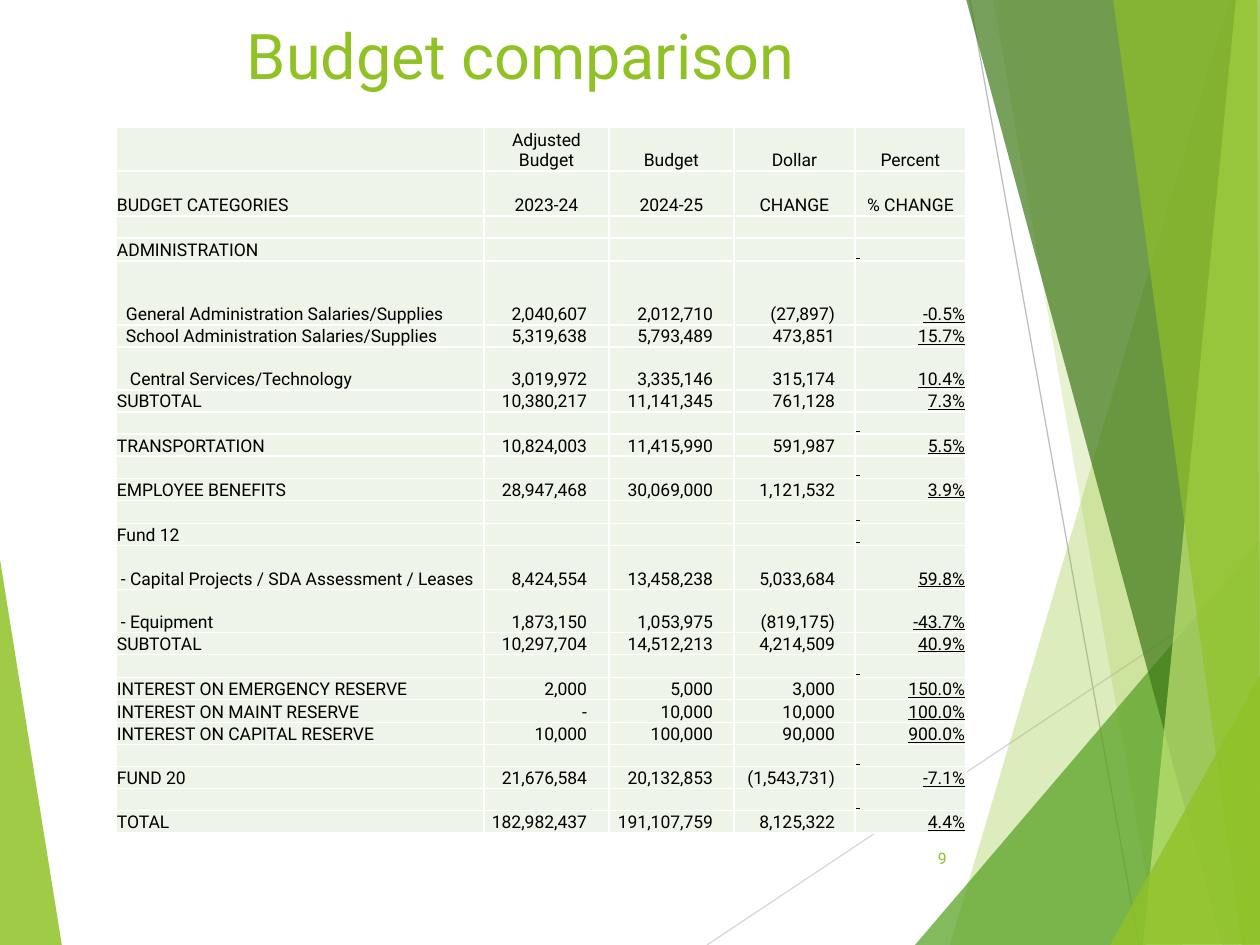
from lxml.etree import SubElement
from pptx import Presentation
from pptx.dml.color import RGBColor as Color
from pptx.enum.shapes import MSO_CONNECTOR as Connector
from pptx.enum.text import MSO_ANCHOR as Anchor, PP_ALIGN as Align
from pptx.oxml.ns import qn
from pptx.util import Pt

PX = 914400 / 126

THEME = {
    "font": "Roboto",
    "accent": "90C226",
    "green": "54A021",
    "dark": "3F7819",
    "pale": "C0E474",
    "cell": "EEF4E8",
    "border": "FFFFFF",
    "ink": "000000",
    "rule_light": "D9D9D9",
    "rule_dark": "BFBFBF",
    "title_size": 36,
    "table_size": 10,
    "page_size": 9,
}


def px(value):
    return round(value * PX)


def write(para, text, size, color, align, underline=None):
    para.alignment = align
    span = para.add_run()
    span.text = text
    span.font.color.rgb = Color.from_string(color)
    formats = {"name": THEME["font"], "size": Pt(size), "underline": underline}
    for name, value in formats.items():
        setattr(span.font, name, value)


deck = Presentation()
deck.slide_width, deck.slide_height = px(1260), px(945)
page = deck.slides.add_slide(deck.slide_layouts[6])

left_facet = [("accent", 85, [(-1, 553), (62, 946), (-1, 945)])]
rules = [
    ("rule_light", (707, 945), (1261, 576)),
    ("rule_dark", (970, 0), (1139, 945)),
]
right_facets = [
    ("accent", 30, [(1229, 0), (950, 945), (1262, 946), (1261, 1)]),
    ("accent", 20, [(993, -1), (1158, 945), (1261, 945), (1261, -1)]),
    ("green", 72, [(915, 945), (1260, 541), (1261, 945)]),
    ("dark", 70, [(966, -1), (1222, 945), (1261, 944), (1261, -1)]),
    ("pale", 70, [(1236, -1), (1143, 945), (1261, 945), (1260, -1)]),
    ("accent", 65, [(1113, -1), (1242, 945), (1260, 945), (1257, -1)]),
    ("accent", 80, [(1110, 945), (1261, 674), (1261, 944)]),
]

for facets, lines in ((left_facet, rules), (right_facets, [])):
    for color, opacity, points in facets:
        builder = page.shapes.build_freeform(*points[0], scale=PX)
        builder.add_line_segments(points[1:], close=True)
        facet = builder.convert_to_shape()
        facet.shadow.inherit = False
        facet.fill.solid()
        facet.fill.fore_color.rgb = Color.from_string(THEME[color])
        facet.line.fill.background()
        paint = facet._element.spPr.find(qn("a:solidFill"))[0]
        SubElement(paint, qn("a:alpha")).set("val", str(opacity * 1000))
    for color, start, end in lines:
        ends = [px(value) for value in start + end]
        rule = page.shapes.add_connector(Connector.STRAIGHT, *ends)
        rule.line.color.rgb = Color.from_string(THEME[color])
        rule.line.width = Pt(0.75)
        SubElement(rule._element.spPr, qn("a:effectLst"))

texts = [
    ("Budget comparison", (84, 10, 874, 116), "title_size", Align.CENTER, Anchor.TOP),
    ("9", (888, 833, 71, 50), "page_size", Align.RIGHT, Anchor.MIDDLE),
]
for text, place, size, align, anchor in texts:
    box = page.shapes.add_textbox(*[px(value) for value in place])
    box.text_frame.word_wrap = True
    box.text_frame.vertical_anchor = anchor
    write(box.text_frame.paragraphs[0], text, THEME[size], THEME["accent"], align)

EMPTY = ("", "", "", "", "")
SPACER = ("", "", "", "", " ")
rows = [
    (44, 0, ("", "Adjusted Budget", "Budget", "Dollar", "Percent")),
    (45, 0, ("BUDGET CATEGORIES", "2023-24", "2024-25", "CHANGE", "% CHANGE")),
    (21, 0, EMPTY),
    (23, 0, ("ADMINISTRATION", "", "", "", " ")),
    (64, 9, ("General Administration Salaries/Supplies", "2,040,607", "2,012,710", "(27,897)", "-0.5%")),
    (22, 9, ("School Administration Salaries/Supplies", "5,319,638", "5,793,489", "473,851", "15.7%")),
    (43, 13, ("Central Services/Technology", "3,019,972", "3,335,146", "315,174", "10.4%")),
    (22, 0, ("SUBTOTAL", "10,380,217", "11,141,345", "761,128", "7.3%")),
    (22, 0, SPACER),
    (22, 0, ("TRANSPORTATION", "10,824,003", "11,415,990", "591,987", "5.5%")),
    (22, 0, SPACER),
    (22, 0, ("EMPLOYEE BENEFITS", "28,947,468", "30,069,000", "1,121,532", "3.9%")),
    (23, 0, SPACER),
    (22, 0, ("Fund 12", "", "", "", " ")),
    (44, 4, ("- Capital Projects / SDA Assessment / Leases", "8,424,554", "13,458,238", "5,033,684", "59.8%")),
    (43, 4, ("- Equipment", "1,873,150", "1,053,975", "(819,175)", "-43.7%")),
    (22, 0, ("SUBTOTAL", "10,297,704", "14,512,213", "4,214,509", "40.9%")),
    (23, 0, SPACER),
    (22, 0, ("INTEREST ON EMERGENCY RESERVE", "2,000", "5,000", "3,000", "150.0%")),
    (23, 0, ("INTEREST ON MAINT RESERVE", "-", "10,000", "10,000", "100.0%")),
    (22, 0, ("INTEREST ON CAPITAL RESERVE", "10,000", "100,000", "90,000", "900.0%")),
    (22, 0, SPACER),
    (22, 0, ("FUND 20", "21,676,584", "20,132,853", "(1,543,731)", "-7.1%")),
    (22, 0, SPACER),
    (22, 0, ("TOTAL", "182,982,437", "191,107,759", "8,125,322", "4.4%")),
]
widths = [368, 125, 125, 121, 111]
right_gaps = [1, 22, 21, 20, 1]
header_count = 2

place = (116, 127, sum(widths), sum(row[0] for row in rows))
frame = page.shapes.add_table(len(rows), len(widths), *[px(value) for value in place])
table = frame.table
table.first_row = table.horz_banding = False
for column, width in zip(table.columns, widths):
    column.width = px(width)

for row_index, (height, indent, values) in enumerate(rows):
    table.rows[row_index].height = px(height)
    heading = row_index < header_count
    for column_index, text in enumerate(values):
        cell = table.cell(row_index, column_index)
        formats = {
            "vertical_anchor": Anchor.BOTTOM,
            "margin_left": px(1 + indent if column_index == 0 else 1),
            "margin_right": px(1 if heading else right_gaps[column_index]),
            "margin_top": px(1),
            "margin_bottom": 0,
        }
        for name, value in formats.items():
            setattr(cell, name, value)
        properties = cell._tc.get_or_add_tcPr()
        for side in ("lnL", "lnR", "lnT", "lnB"):
            border = SubElement(properties, qn(f"a:{side}"), w=str(Pt(1)))
            paint = SubElement(border, qn("a:solidFill"))
            SubElement(paint, qn("a:srgbClr"), val=THEME["border"])
        cell.fill.solid()
        cell.fill.fore_color.rgb = Color.from_string(THEME["cell"])
        para = cell.text_frame.paragraphs[0]
        if not text:
            ending = para._p.get_or_add_endParaRPr()
            ending.set("sz", str(THEME["table_size"] * 100))
            continue
        if column_index == 0 or text == " ":
            align = Align.LEFT
        else:
            align = Align.CENTER if heading else Align.RIGHT
        underline = True if column_index == 4 and not heading else None
        write(para, text, THEME["table_size"], THEME["ink"], align, underline)

deck.save("out.pptx")
